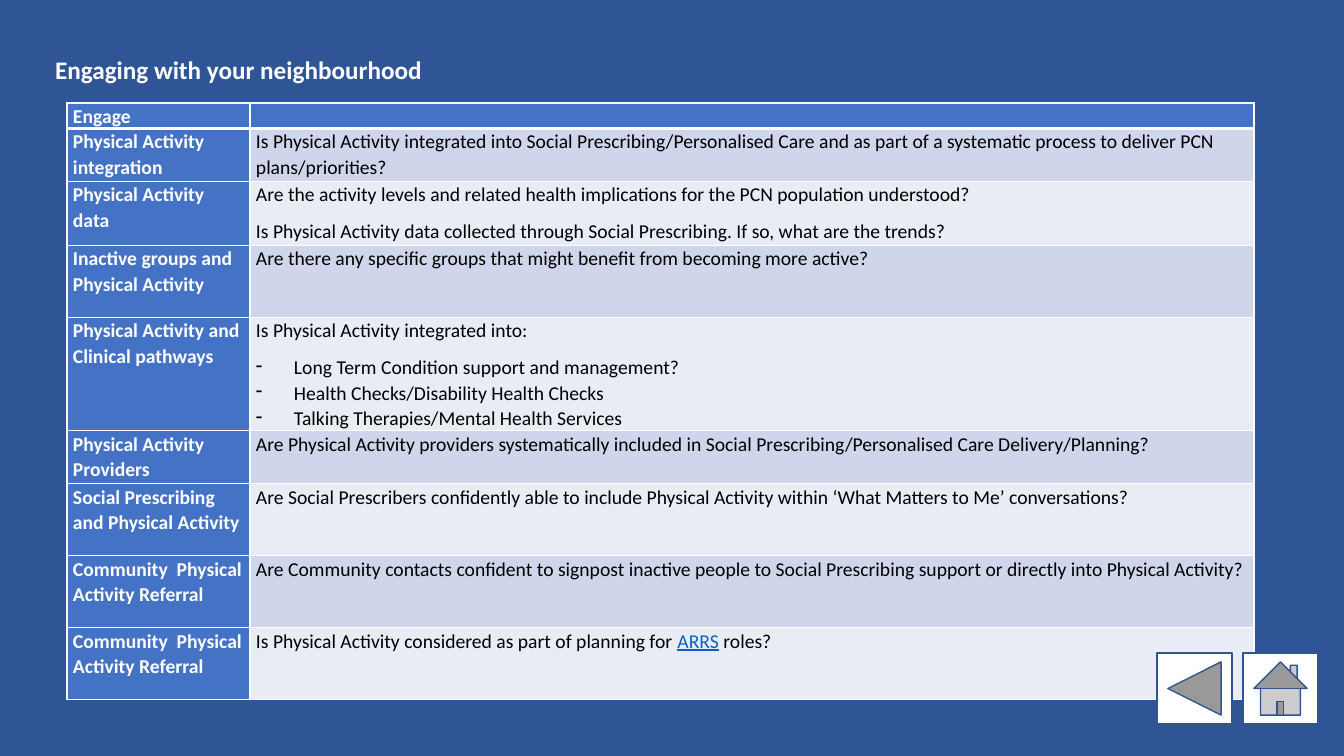
"""Build the neighbourhood engagement slide with its question table and buttons."""
from lxml.etree import SubElement
from pptx import Presentation
from pptx.dml.color import RGBColor
from pptx.enum.shapes import MSO_SHAPE
from pptx.enum.text import MSO_ANCHOR, MSO_AUTO_SIZE, PP_ALIGN
from pptx.oxml.ns import qn
from pptx.util import Emu, Pt

SCALE = 914400 / 100.8
FONT = "Calibri"
COLORS = {
    "back": "2F5597", "head": "4472C4", "odd": "CFD5EA", "even": "E9EBF5",
    "white": "FFFFFF", "black": "000000", "link": "0563C1", "edge": "325491",
}
WIDTHS = [183, 1004]
HEIGHTS = [18, 53, 64, 72, 88, 53, 72, 72, 72]
ROWS = [
    ("Engage", [""]),
    ("Physical Activity integration", [
        "Is Physical Activity integrated into Social Prescribing/Personalised Care "
        "and as part of a systematic process to deliver PCN plans/priorities?"]),
    ("Physical Activity data", [
        "Are the activity levels and related health implications for the PCN population understood?",
        "Is Physical Activity data collected through Social Prescribing. If so, what are the trends?"]),
    ("Inactive groups and Physical Activity", [
        "Are there any specific groups that might benefit from becoming more active?"]),
    ("Physical Activity and Clinical pathways", [
        "Is Physical Activity integrated into:",
        ("Long Term Condition support and management?",
         "Health Checks/Disability Health Checks",
         "Talking Therapies/Mental Health Services")]),
    ("Physical Activity Providers", [
        "Are Physical Activity providers systematically included in "
        "Social Prescribing/Personalised Care Delivery/Planning?"]),
    ("Social Prescribing and Physical Activity", [
        "Are Social Prescribers confidently able to include Physical Activity "
        "within ‘What Matters to Me’ conversations?"]),
    ("Community  Physical Activity Referral", [
        "Are Community contacts confident to signpost inactive people to "
        "Social Prescribing support or directly into Physical Activity?"]),
    ("Community  Physical Activity Referral", [
        "Is Physical Activity considered as part of planning for ARRS roles?"]),
]


def px(count):
    """Turn pixels into EMU."""
    return Emu(round(count * SCALE))


def tint(name):
    """Return the named colour."""
    return RGBColor.from_string(COLORS[name])


def paint(fill, name):
    """Make a fill solid in the named colour."""
    fill.solid()
    fill.fore_color.rgb = tint(name)


def write(para, text, size=14, color="black", bold=False, lead=1.07, after=8, bullet=None):
    """Fill a paragraph, marking the word ARRS as linked text."""
    para.alignment = PP_ALIGN.LEFT
    para.line_spacing = lead
    para.space_after = Pt(after)
    if bullet:
        props = para._p.get_or_add_pPr()
        props.set("marL", str(px(38)))
        props.set("indent", str(-px(38)))
        SubElement(props, qn("a:buChar")).set("char", bullet)
    if not text:
        SubElement(para._p, qn("a:endParaRPr")).set("sz", str(size * 100))
        return
    start, mark, rest = text.partition("ARRS")
    for part in filter(None, (start, mark, rest)):
        run = para.add_run()
        run.text = part
        font = run.font
        font.name, font.size, font.bold = FONT, Pt(size), bold
        font.color.rgb = tint("link" if part == mark else color)
        if part == mark:
            font.underline = True


def border(cell, row):
    """Draw white cell edges, thicker below the header row."""
    props = cell._tc.get_or_add_tcPr()
    for side in "LRTB":
        thick = (row, side) in ((0, "B"), (1, "T"))
        line = SubElement(props, qn(f"a:ln{side}"), w=str(Pt(3 if thick else 1)))
        fill = SubElement(line, qn("a:solidFill"))
        SubElement(fill, qn("a:srgbClr"), val=COLORS["white"])


def fill_cell(cell, row, lines, fill, **style):
    """Format one cell and write its paragraphs."""
    border(cell, row)
    cell.margin_left = cell.margin_right = px(6)
    cell.margin_top = cell.margin_bottom = 0
    paint(cell.fill, fill)
    frame = cell.text_frame
    items = []
    for line in lines:
        if isinstance(line, tuple):
            items += [(text, {"bullet": "-", "after": 8 if text == line[-1] else 0})
                      for text in line]
        else:
            items.append((line, {}))
    for index, (text, extra) in enumerate(items):
        para = frame.add_paragraph() if index else frame.paragraphs[0]
        write(para, text, **style, **extra)


def add_grid(slide):
    """Add the table of questions."""
    table = slide.shapes.add_table(len(ROWS), len(WIDTHS), px(67), px(103),
                                   px(sum(WIDTHS)), px(sum(HEIGHTS))).table
    for column, width in zip(table.columns, WIDTHS):
        column.width = px(width)
    for index, (topic, lines) in enumerate(ROWS):
        table.rows[index].height = px(HEIGHTS[index])
        band = "odd" if index % 2 else "even"
        fill_cell(table.cell(index, 0), index, [topic], "head", color="white", bold=True)
        fill_cell(table.cell(index, 1), index, lines, band if index else "head")


def add_title(slide, text):
    """Place and write the slide title."""
    title = slide.shapes.title
    title.left, title.top, title.width, title.height = map(px, (45, -2, 1159, 146))
    frame = title.text_frame
    frame.auto_size = MSO_AUTO_SIZE.NONE
    frame.vertical_anchor = MSO_ANCHOR.MIDDLE
    frame.word_wrap = True
    write(frame.paragraphs[0], text, size=18, color="white", bold=True, lead=0.9, after=0)


def add_button(slide, kind, left):
    """Add a white action button."""
    button = slide.shapes.add_shape(kind, px(left), px(653), px(75), px(71))
    button.shadow.inherit = False
    paint(button.fill, "white")
    button.line.color.rgb = tint("edge")
    button.line.width = Pt(1)


def main():
    """Build and save the slide."""
    deck = Presentation()
    deck.slide_width, deck.slide_height = px(1344), px(756)
    slide = deck.slides.add_slide(deck.slide_layouts[5])
    paint(slide.background.fill, "back")
    add_grid(slide)
    add_title(slide, "Engaging with your neighbourhood")
    add_button(slide, MSO_SHAPE.ACTION_BUTTON_HOME, 1243)
    add_button(slide, MSO_SHAPE.ACTION_BUTTON_BACK_OR_PREVIOUS, 1157)
    deck.save("out.pptx")


if __name__ == "__main__":
    main()
